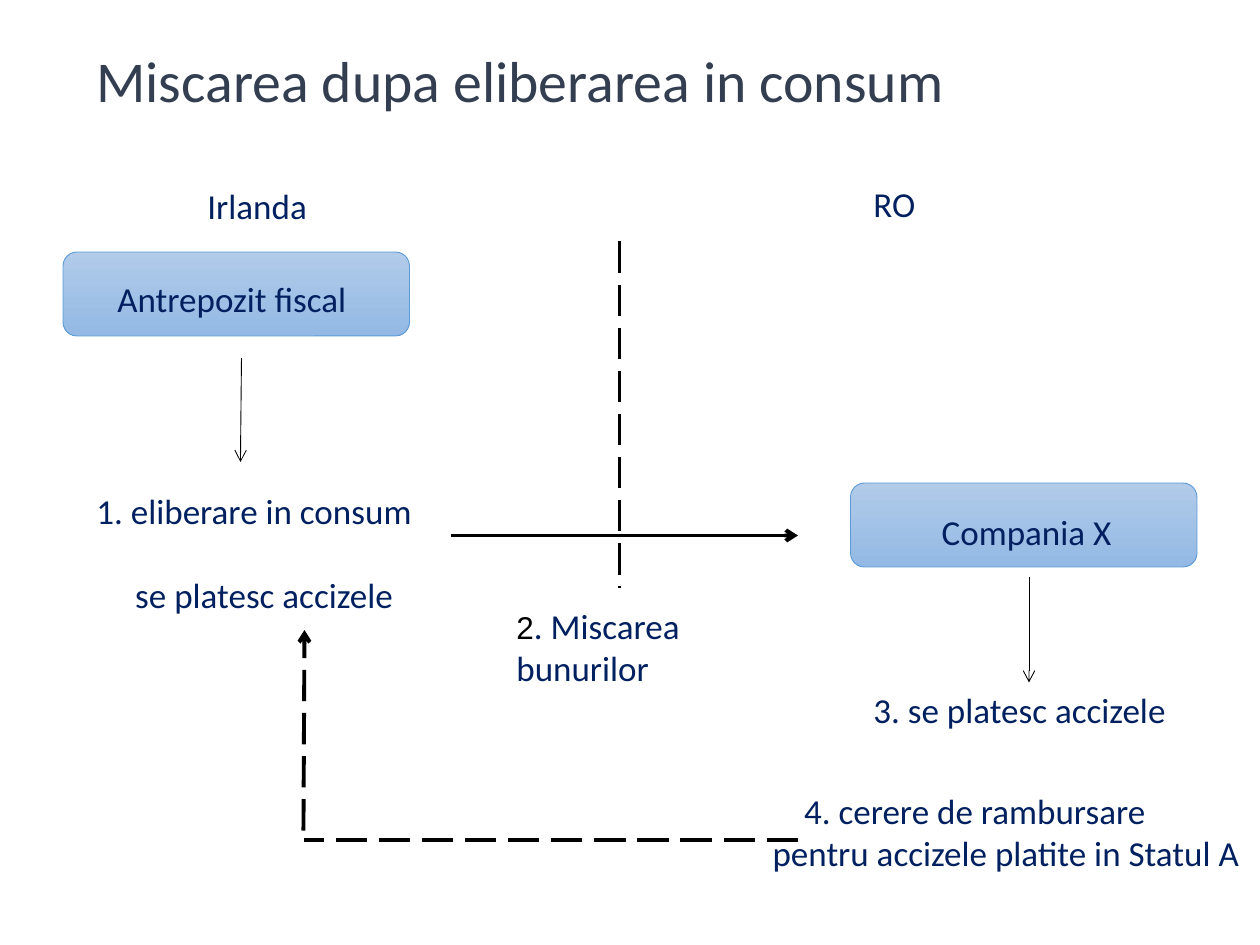
from pptx import Presentation
from pptx.dml.color import RGBColor
from pptx.enum.dml import MSO_LINE
from pptx.enum.shapes import MSO_CONNECTOR, MSO_SHAPE
from pptx.enum.text import MSO_ANCHOR, PP_ALIGN
from pptx.oxml.ns import qn
from pptx.util import Pt
from lxml.etree import SubElement

PX = 7620  # 120 px to the inch
COLORS = {"title": "333F50", "text": "002060", "black": "000000",
          "edge": "5B9BD5", "top": "B1CBE9", "base": "93B9E4"}


def color(name):
    return RGBColor.from_string(COLORS[name])


def add_text(x, y, w, h, lines, indents=(0,), size=20, tone="text"):
    box = slide.shapes.add_textbox(x * PX, y * PX, w * PX, h * PX)
    frame = box.text_frame
    frame.word_wrap = True
    frame.text = lines
    for para, indent in zip(frame.paragraphs, indents):
        if indent:
            para._p.get_or_add_pPr().set("indent", str(indent * PX))
        for run in para.runs:
            run.font.name = "Calibri"
            run.font.size = Pt(size)
            run.font.color.rgb = color(tone)
    return frame


prs = Presentation()
prs.slide_width, prs.slide_height = 1200 * PX, 900 * PX
slide = prs.slides.add_slide(prs.slide_layouts[6])

# Title
title = add_text(80, 50, 930, 60, "Miscarea dupa eliberarea in consum",
                 size=33, tone="title")
title.vertical_anchor = MSO_ANCHOR.MIDDLE
title.paragraphs[0].line_spacing = 0.9

# Boxes of the two parties
for x, y in [(60, 240), (810, 460)]:
    party = slide.shapes.add_shape(MSO_SHAPE.ROUNDED_RECTANGLE,
                                   x * PX, y * PX, 330 * PX, 80 * PX)
    party.shadow.inherit = False
    party.fill.gradient()
    party.fill.gradient_angle = 270
    for stop, name in zip(party.fill.gradient_stops, ("top", "base")):
        stop.color.rgb = color(name)
    party.line.color.rgb = color("edge")
    party.line.width = Pt(0.5)

# Border, flows and refund path: ends, width, dashed, arrow
LINES = [
    (590, 230, 590, 560, 2.25, True, False),
    (430, 510, 760, 510, 2.25, False, True),
    (230, 341, 229, 440, 0.5, False, True),
    (980, 550, 980, 650, 0.5, False, True),
    (760, 800, 290, 800, 2.25, True, False),
    (289, 791, 290, 600, 2.25, True, True),
]
for *ends, width, dashed, arrow in LINES:
    link = slide.shapes.add_connector(MSO_CONNECTOR.STRAIGHT,
                                      *[end * PX for end in ends])
    link.line.color.rgb = color("black")
    link.line.width = Pt(width)
    if dashed:
        link.line.dash_style = MSO_LINE.LONG_DASH
    if arrow:
        SubElement(link.line._get_or_add_ln(), qn("a:tailEnd"), type="arrow")
    SubElement(link._element.spPr, qn("a:effectLst"))

# Countries and party names
land = add_text(90, 170, 310, 53, "Irlanda")
land.paragraphs[0].alignment = PP_ALIGN.CENTER
add_text(820, 168, 310, 53, "RO")
add_text(100, 258, 290, 53, "Antrepozit fiscal")
add_text(840, 480, 290, 53, "Compania X", [45])

# Steps
first = add_text(80, 460, 330, 92,
                 "1. eliberare in consum\nse platesc accizele", [0, 37])
first.paragraphs[1].space_before = Pt(24)
add_text(790, 650, 360, 53, "3. se platesc accizele", [30])
add_text(724, 746, 470, 92,
         "4. cerere de rambursare pentru accizele platite in Statul A", [30])

# Step 2 has its number in another font
goods = add_text(480, 570, 210, 92, "2")
digit = goods.paragraphs[0].runs[0].font
digit.name, digit.size = "Arial", Pt(18)
digit.color.rgb = color("black")
rest = goods.paragraphs[0].add_run()
rest.text = ". Miscarea bunurilor"
rest.font.name, rest.font.size = "Calibri", Pt(20)
rest.font.color.rgb = color("text")

prs.save("out.pptx")
